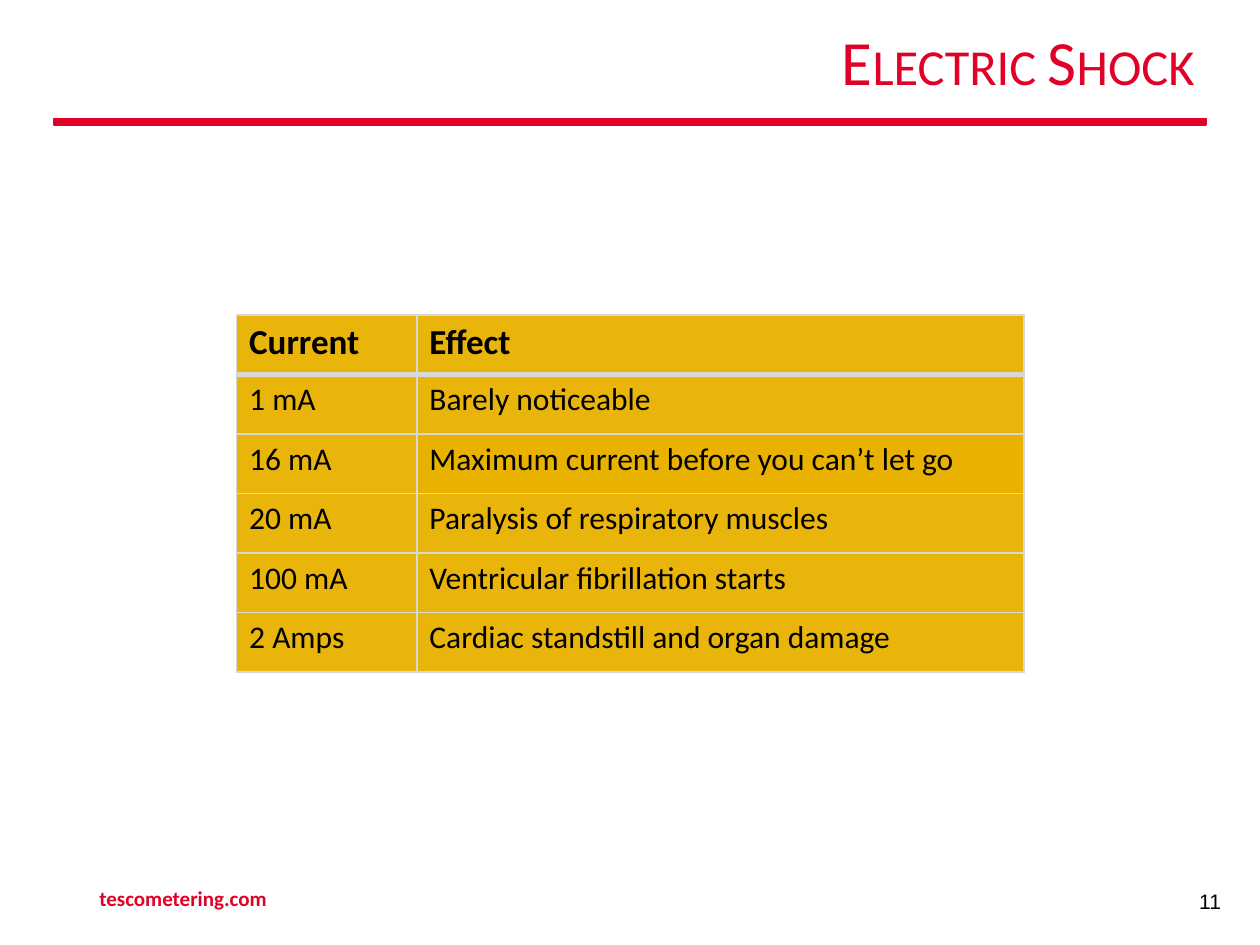
from dataclasses import dataclass
from typing import NamedTuple

from lxml.etree import SubElement
from pptx import Presentation
from pptx.dml.color import RGBColor
from pptx.enum.shapes import MSO_SHAPE
from pptx.enum.text import MSO_ANCHOR, MSO_AUTO_SIZE, PP_ALIGN
from pptx.oxml.ns import qn
from pptx.util import Pt


@dataclass(frozen=True)
class Theme:
    red: str = "E10027"
    gold: str = "EAB200"
    grey: str = "D8D8D8"
    black: str = "000000"
    body_font: str = "Calibri"
    number_font: str = "Arial"
    title_size: float = 36
    header_size: float = 20
    cell_size: float = 18
    footer_size: float = 12
    cell_opacity: int = 96


class Area(NamedTuple):
    left: float
    top: float
    width: float
    height: float

    def lengths(self):
        return [Pt(value) for value in self]


class Effect(NamedTuple):
    current: str
    effect: str


THEME = Theme()
HEADER = Effect("Current", "Effect")
EFFECTS = [
    Effect("1 mA", "Barely noticeable"),
    Effect("16 mA", "Maximum current before you can’t let go"),
    Effect("20 mA", "Paralysis of respiratory muscles"),
    Effect("100 mA", "Ventricular fibrillation starts"),
    Effect("2 Amps", "Cardiac standstill and organ damage"),
]
SOLID_CELL = (2, 1)
COLUMN_WIDTHS = (103, 347)
TABLE_AREA = Area(135.2, 180, sum(COLUMN_WIDTHS), 204)


def add_span(para, text: str, size: float, color: str,
             font: str = THEME.body_font, bold: bool = False):
    span = para.add_run()
    span.text = text
    span.font.name = font
    span.font.size = Pt(size)
    span.font.bold = bold
    span.font.color.rgb = RGBColor.from_string(color)
    return span


def add_title(page, text: str) -> None:
    title = page.shapes.title
    title.left, title.top, title.width, title.height = Area(122.4, 10.8, 567.4, 53.3).lengths()
    frame = title.text_frame
    frame.auto_size = MSO_AUTO_SIZE.NONE
    frame.vertical_anchor = MSO_ANCHOR.MIDDLE
    para = frame.paragraphs[0]
    para.alignment = PP_ALIGN.RIGHT
    para.line_spacing = 0.9
    span = add_span(para, text, THEME.title_size, THEME.red)
    span.font._element.set("cap", "small")


def add_rule(page) -> None:
    rule = page.shapes.add_shape(MSO_SHAPE.RECTANGLE, *Area(31, 67.7, 658, 3.6).lengths())
    rule.shadow.inherit = False
    rule.fill.solid()
    rule.fill.fore_color.rgb = RGBColor.from_string(THEME.red)
    rule.line.color.rgb = RGBColor.from_string(THEME.red)
    rule.line.width = Pt(1)


def add_footer(page, area: Area, text: str, color: str, font: str,
               bold: bool, anchor: MSO_ANCHOR) -> None:
    box = page.shapes.add_textbox(*area.lengths())
    frame = box.text_frame
    frame.word_wrap = True
    frame.vertical_anchor = anchor
    add_span(frame.paragraphs[0], text, THEME.footer_size, color, font, bold)


def add_border(cell, side: str, width: float) -> None:
    line = SubElement(cell._tc.get_or_add_tcPr(), qn(f"a:{side}"), w=str(Pt(width)))
    fill = SubElement(line, qn("a:solidFill"))
    SubElement(fill, qn("a:srgbClr"), val=THEME.grey)


def format_cell(cell, text: str, is_header: bool, above_header_line: bool, solid: bool) -> None:
    """Borders go in before the fill, as the cell schema orders them."""
    for side in ("lnL", "lnR", "lnT", "lnB"):
        thick = (side == "lnB" and is_header) or (side == "lnT" and above_header_line)
        add_border(cell, side, 3 if thick else 1)
    cell.fill.solid()
    cell.fill.fore_color.rgb = RGBColor.from_string(THEME.gold)
    if not solid:
        color = cell._tc.tcPr.find(qn("a:solidFill")).find(qn("a:srgbClr"))
        SubElement(color, qn("a:alpha"), val=str(THEME.cell_opacity * 1000))
    size = THEME.header_size if is_header else THEME.cell_size
    add_span(cell.text_frame.paragraphs[0], text, size, THEME.black, bold=is_header)


def add_effects_table(page) -> None:
    rows = [HEADER, *EFFECTS]
    table = page.shapes.add_table(len(rows), len(COLUMN_WIDTHS), *TABLE_AREA.lengths()).table
    table.horz_banding = False
    for column, width in zip(table.columns, COLUMN_WIDTHS):
        column.width = Pt(width)
    for row_index, row in enumerate(rows):
        table.rows[row_index].height = Pt(TABLE_AREA.height / len(rows))
        for column_index, text in enumerate(row):
            format_cell(table.cell(row_index, column_index), text, row_index == 0,
                        row_index == 1, (row_index, column_index) == SOLID_CELL)


def main() -> None:
    deck = Presentation()
    deck.slide_width, deck.slide_height = Pt(720), Pt(540)
    page = deck.slides.add_slide(deck.slide_layouts[5])
    add_rule(page)
    add_title(page, "Electric Shock")
    add_effects_table(page)
    add_footer(page, Area(49.7, 499, 243.4, 28.8), "tescometering.com",
               THEME.red, THEME.body_font, True, MSO_ANCHOR.MIDDLE)
    add_footer(page, Area(678.2, 504, 28.8, 36), "11",
               THEME.black, THEME.number_font, False, MSO_ANCHOR.TOP)
    deck.save("out.pptx")


if __name__ == "__main__":
    main()
